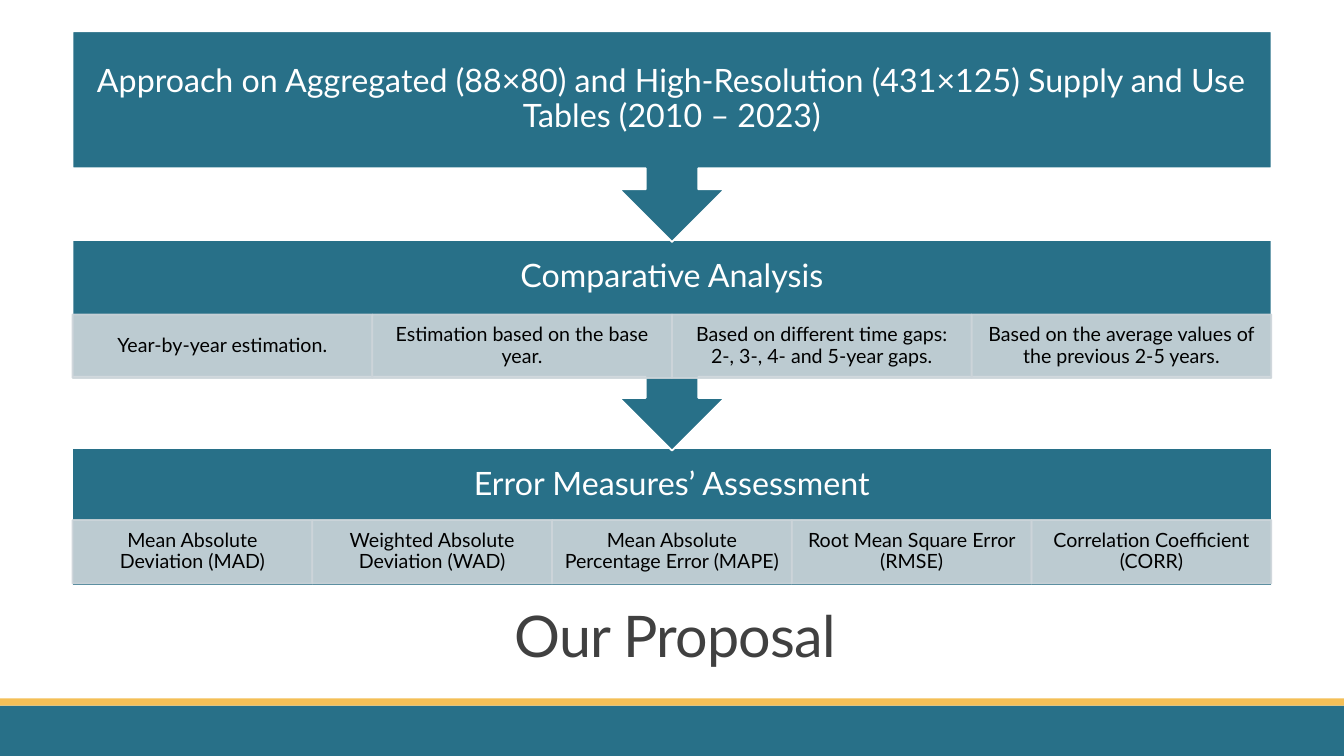
from lxml.etree import SubElement
from pptx import Presentation
from pptx.dml.color import RGBColor
from pptx.enum.shapes import MSO_SHAPE
from pptx.enum.text import MSO_ANCHOR, MSO_AUTO_SIZE, PP_ALIGN
from pptx.oxml.ns import qn
from pptx.util import Inches, Pt

TEAL, GOLD, GREY = "287088", "F4BF57", "CDD5DA"
WHITE, BLACK, CHARCOAL = "FFFFFF", "000000", "404040"
LEFT, WIDTH = 0.72, 11.89
HEADING = {"size": 23, "color": WHITE, "side": 0.18, "edge": 0.18, "spacing": 0.9}
TILE = {"size": 14, "color": BLACK, "side": 0.11, "edge": 0.02, "spacing": 0.9}
TITLE = {"size": 41, "color": CHARCOAL, "side": 0.1, "edge": 0.05, "spacing": 0.85}

APPROACH = ("Approach on Aggregated (88×80) and High-Resolution (431×125) "
            "Supply and Use Tables (2010 – 2023)")
COMPARISONS = [
    "Year-by-year estimation.",
    "Estimation based on the base year.",
    "Based on different time gaps: 2-, 3-, 4- and 5-year gaps.",
    "Based on the average values of the previous 2-5 years.",
]
MEASURES = [
    "Mean Absolute Deviation (MAD)",
    "Weighted Absolute Deviation (WAD)",
    "Mean Absolute Percentage Error (MAPE)",
    "Root Mean Square Error (RMSE)",
    "Correlation Coefficient (CORR)",
]


def rgb(color):
    """Turn a hex string into a colour."""
    return RGBColor.from_string(color)


def set_attributes(target, values):
    """Set each attribute of the target from a dict."""
    for name, value in values.items():
        setattr(target, name, value)


def write(shape, text, style):
    """Write one centred paragraph in the given style."""
    frame = shape.text_frame
    set_attributes(frame, {
        "text": text,
        "word_wrap": True,
        "auto_size": MSO_AUTO_SIZE.NONE,
        "vertical_anchor": MSO_ANCHOR.MIDDLE,
        "margin_left": Inches(style["side"]),
        "margin_right": Inches(style["side"]),
        "margin_top": Inches(style["edge"]),
        "margin_bottom": Inches(style["edge"]),
    })
    paragraph = frame.paragraphs[0]
    set_attributes(paragraph, {"alignment": PP_ALIGN.CENTER, "line_spacing": style["spacing"]})
    font = paragraph.runs[0].font
    set_attributes(font, {"name": "Lato", "size": Pt(style["size"])})
    font.color.rgb = rgb(style["color"])


def add_block(slide, kind, box, fill, line=None):
    """Add a filled shape, with an outline if a line colour is given."""
    shape = slide.shapes.add_shape(kind, *map(Inches, box))
    shape.shadow.inherit = False
    shape.fill.solid()
    shape.fill.fore_color.rgb = rgb(fill)
    if line:
        shape.line.color.rgb = rgb(line)
        shape.line.width = Pt(1.25)
    else:
        shape.line.fill.background()
    return shape


def add_heading(slide, top, height, text):
    """Add a heading across the full width of a step."""
    box = slide.shapes.add_textbox(*map(Inches, (LEFT, top, WIDTH, height)))
    write(box, text, HEADING)


def add_callout(slide, top):
    """Add a step block whose arrow points down to the next step."""
    box = (LEFT, top, WIDTH, 2.09)
    add_block(slide, MSO_SHAPE.UP_ARROW_CALLOUT, box, TEAL, WHITE).rotation = 180


def add_tiles(slide, top, texts):
    """Add a row of equal, slightly transparent tiles."""
    width = WIDTH / len(texts)
    for index, text in enumerate(texts):
        box = (LEFT + index * width, top, width, 0.63)
        tile = add_block(slide, MSO_SHAPE.RECTANGLE, box, GREY, GREY)
        for color in tile._element.spPr.iter(qn("a:srgbClr")):
            SubElement(color, qn("a:alpha"), val="90000")
        write(tile, text, TILE)


def add_title(slide, text):
    """Place and format the title placeholder."""
    title = slide.shapes.title
    set_attributes(title, {
        "left": Inches(1.2), "top": Inches(5.7),
        "width": Inches(11), "height": Inches(1.3),
    })
    write(title, text, TITLE)
    title.text_frame.paragraphs[0].runs[0].font._element.set("spc", "-50")


def main():
    """Build the slide and save it."""
    presentation = Presentation()
    set_attributes(presentation, {"slide_width": Inches(13.33), "slide_height": Inches(7.5)})
    slide = presentation.slides.add_slide(presentation.slide_layouts[5])

    add_block(slide, MSO_SHAPE.RECTANGLE, (0, 7, 13.33, 0.5), TEAL)
    add_block(slide, MSO_SHAPE.RECTANGLE, (0, 6.93, 13.33, 0.07), GOLD)
    add_title(slide, "Our Proposal")

    add_block(slide, MSO_SHAPE.RECTANGLE, (LEFT, 4.45, WIDTH, 1.36), TEAL, WHITE)
    add_heading(slide, 4.45, 0.73, "Error Measures’ Assessment")
    add_tiles(slide, 5.16, MEASURES)

    add_callout(slide, 2.38)
    add_heading(slide, 2.38, 0.73, "Comparative Analysis")
    add_tiles(slide, 3.12, COMPARISONS)

    add_callout(slide, 0.31)
    add_heading(slide, 0.31, 1.36, APPROACH)

    presentation.save("out.pptx")


if __name__ == "__main__":
    main()
